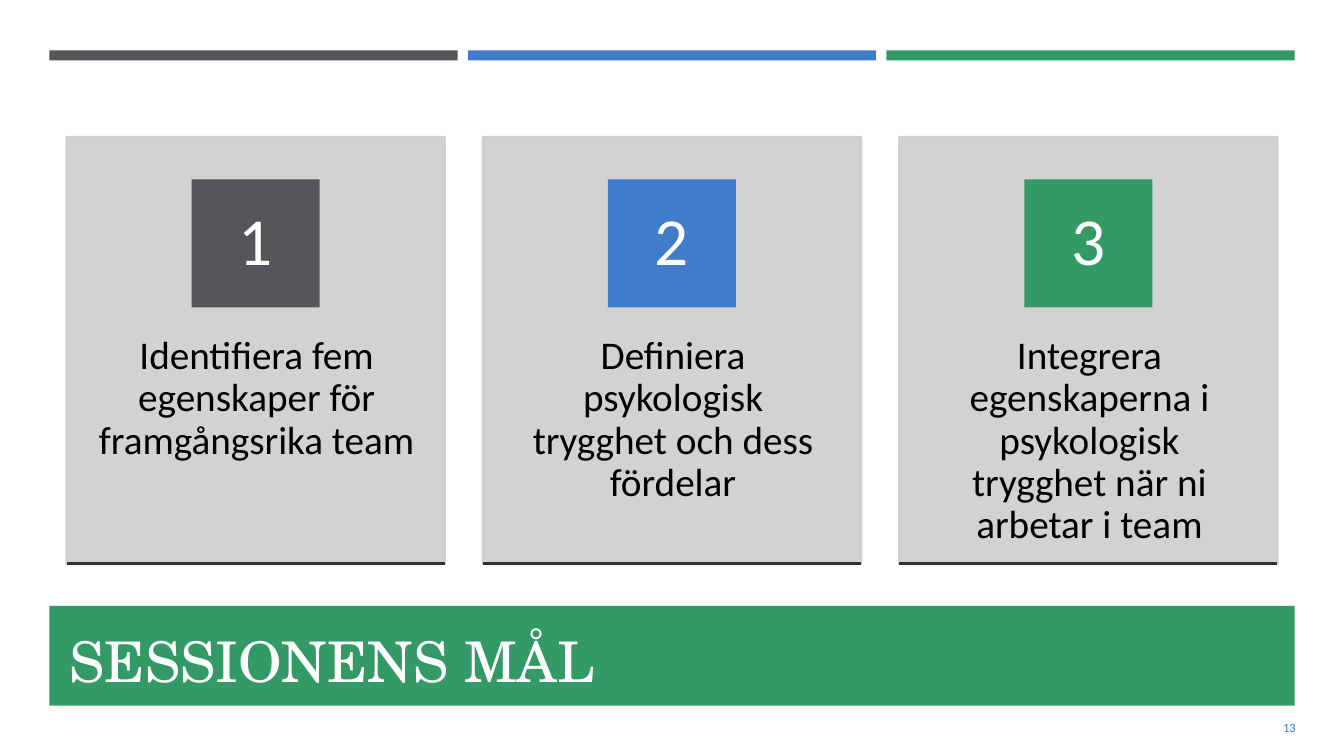
import pptx
import pptx.dml.color
import pptx.enum.shapes
import pptx.enum.text
import pptx.oxml
import pptx.oxml.ns
import pptx.util
from pptx.util import Inches

COLORS = {
    "grey": "55565A",
    "blue": "407CCA",
    "green": "339966",
    "card": "CECECE",
    "rule": "323232",
    "black": "000000",
    "white": "FFFFFF",
    "title": "FFFEFF",
}
ACCENTS = ["grey", "blue", "green"]
GOALS = [
    "Identifiera fem egenskaper för framgångsrika team",
    "Definiera psykologisk trygghet och dess fördelar",
    "Integrera egenskaperna i psykologisk trygghet när ni arbetar i team",
]
ALIGN = pptx.enum.text.PP_ALIGN
ANCHOR = pptx.enum.text.MSO_ANCHOR

MARGIN, CONTENT_WIDTH = 0.49, 12.35
BAR_WIDTH, BAR_PITCH = 4.05, 4.15
CARD_LEFT, CARD_TOP, CARD_WIDTH, CARD_HEIGHT = 0.66, 1.36, 3.75, 4.23
CARD_PITCH = 4.13
BADGE_SIZE = 1.27


def rgb(color):
    return pptx.dml.color.RGBColor.from_string(COLORS[color])


def set_alpha(fill_parent, percent):
    """Make the solid fill found inside an element partly transparent."""
    color = fill_parent.find(".//" + pptx.oxml.ns.qn("a:srgbClr"))
    alpha = pptx.oxml.parse_xml(
        f'<a:alpha {pptx.oxml.ns.nsdecls("a")} val="{percent * 1000}"/>')
    color.append(alpha)


def add_block(slide, left, top, width, height, color):
    block = slide.shapes.add_shape(
        pptx.enum.shapes.MSO_SHAPE.RECTANGLE,
        Inches(left), Inches(top), Inches(width), Inches(height))
    block.shadow.inherit = False
    block.fill.solid()
    block.fill.fore_color.rgb = rgb(color)
    block.line.fill.background()
    return block


def write(shape, text, size, color, font="Calibri", align=ALIGN.LEFT,
          anchor=ANCHOR.MIDDLE, insets=(0.1, 0.05, 0.1, 0.05), spacing=None):
    frame = shape.text_frame
    frame.word_wrap = True
    frame.vertical_anchor = anchor
    (frame.margin_left, frame.margin_top,
     frame.margin_right, frame.margin_bottom) = map(Inches, insets)
    paragraph = frame.paragraphs[0]
    paragraph.alignment = align
    paragraph.line_spacing = spacing
    run = paragraph.add_run()
    run.text = text
    run.font.name = font
    run.font.size = pptx.util.Pt(size)
    run.font.color.rgb = rgb(color)


def add_text(slide, left, top, width, height, *args, **options):
    box = slide.shapes.add_textbox(
        Inches(left), Inches(top), Inches(width), Inches(height))
    write(box, *args, **options)


def add_rule(slide, left, top, width):
    rule = slide.shapes.add_connector(
        pptx.enum.shapes.MSO_CONNECTOR.STRAIGHT,
        Inches(left), Inches(top), Inches(left + width), Inches(top))
    rule.line.color.rgb = rgb("rule")
    rule.line.width = pptx.util.Pt(1.75)
    rule._element.spPr.append(
        pptx.oxml.parse_xml(f'<a:effectLst {pptx.oxml.ns.nsdecls("a")}/>'))


def add_goal_card(slide, left, number, goal, accent):
    card = add_block(slide, left, CARD_TOP, CARD_WIDTH, CARD_HEIGHT, "card")
    card.line.color.rgb = rgb("card")
    card.line.width = pptx.util.Pt(1.75)
    properties = card._element.spPr
    set_alpha(properties.find(pptx.oxml.ns.qn("a:solidFill")), 90)
    set_alpha(properties.find(pptx.oxml.ns.qn("a:ln")), 90)

    add_text(slide, left, 2.97, CARD_WIDTH, 2.54, goal, 28, "black",
             align=ALIGN.CENTER, anchor=ANCHOR.TOP,
             insets=(0.31, 0.36, 0.29, 0.36), spacing=0.9)

    badge = add_block(slide, left + (CARD_WIDTH - BADGE_SIZE) / 2, 1.78,
                      BADGE_SIZE, BADGE_SIZE, accent)
    write(badge, str(number), 48, "white", align=ALIGN.CENTER,
          insets=(0.1, 0.01, 0.1, 0.01), spacing=0.9)

    add_rule(slide, left, CARD_TOP + CARD_HEIGHT, CARD_WIDTH)


def main():
    deck = pptx.Presentation()
    deck.slide_width, deck.slide_height = Inches(13.33), Inches(7.5)
    slide = deck.slides.add_slide(deck.slide_layouts[6])

    # Coloured bars along the top
    for index, accent in enumerate(ACCENTS):
        add_block(slide, MARGIN + index * BAR_PITCH, 0.5, BAR_WIDTH, 0.1, accent)

    # Title band and page number
    add_block(slide, MARGIN, 6.01, CONTENT_WIDTH, 0.99, "green")
    add_text(slide, 0.59, 6.11, 12.06, 0.87, "SESSIONENS MÅL", 40, "title",
             font="TeX Gyre Schola")
    add_text(slide, 11.8, 7.02, 1.15, 0.4, "13", 9, "blue", align=ALIGN.RIGHT)

    # Numbered goals
    for index, (goal, accent) in enumerate(zip(GOALS, ACCENTS)):
        add_goal_card(slide, CARD_LEFT + index * CARD_PITCH, index + 1, goal, accent)

    deck.save("out.pptx")


if __name__ == "__main__":
    main()
